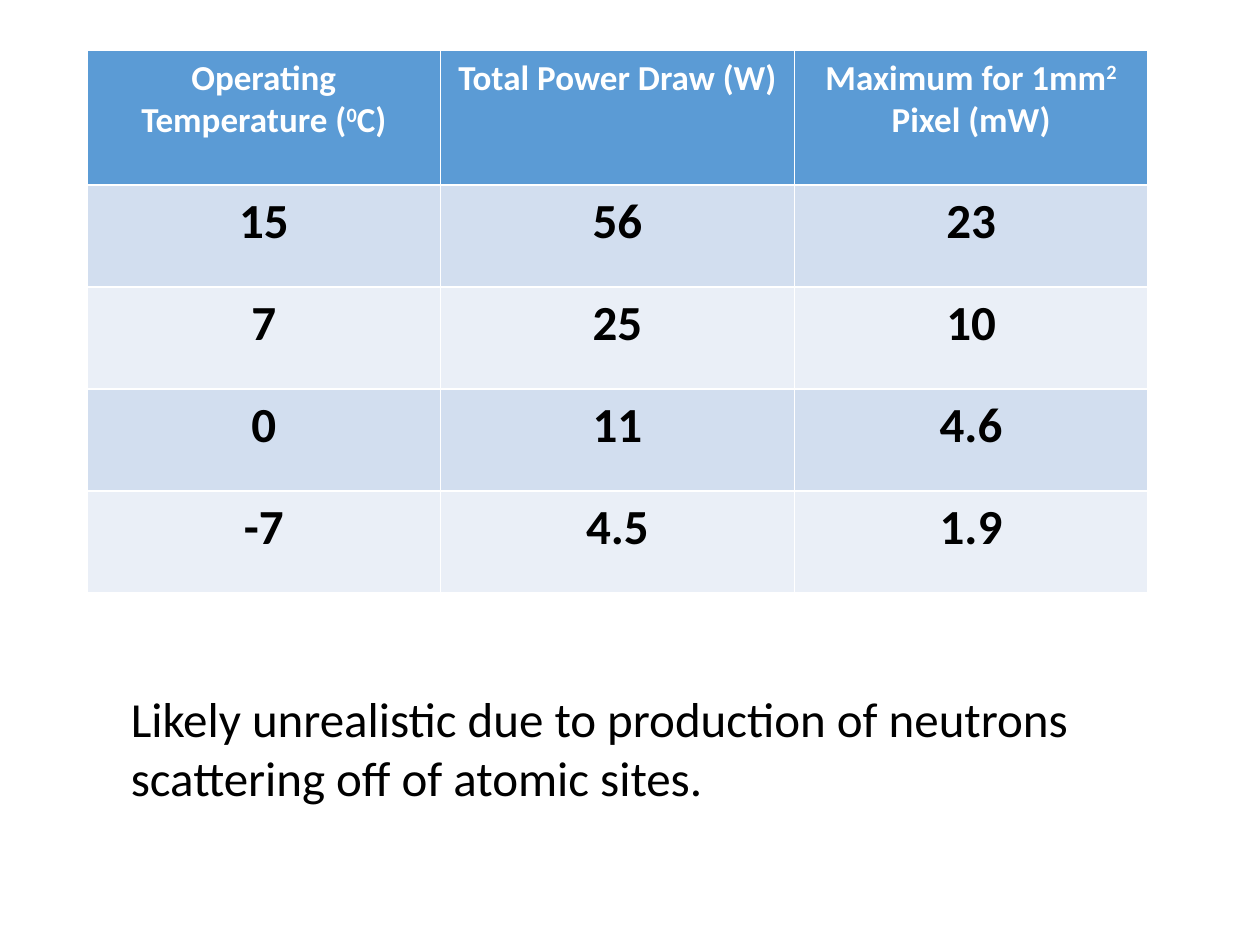
from dataclasses import dataclass

from pptx import Presentation
from pptx.dml.color import RGBColor
from pptx.enum.text import MSO_AUTO_SIZE, PP_ALIGN
from pptx.util import Pt


@dataclass(frozen=True)
class Theme:
    font: str = "Calibri"
    header_size: float = 20
    body_size: float = 28
    white: str = "FFFFFF"
    black: str = "000000"
    header_fill: str = "5B9BD5"
    band_fills: tuple = ("D2DEEF", "EAEFF7")


THEME = Theme()

# Each header is a list of (text, is_superscript) pieces
HEADERS = [
    [("Operating Temperature (", False), ("0", True), ("C)", False)],
    [("Total Power Draw (W)", False)],
    [("Maximum for 1mm", False), ("2", True), (" Pixel (mW)", False)],
]
POWER_ROWS = [
    ("15", "56", "23"),
    ("7", "25", "10"),
    ("0", "11", "4.6"),
    ("-7", "4.5", "1.9"),
]
NOTE = ("Likely unrealistic due to production of neutrons "
        "scattering off of atomic sites.")


def write_paragraph(p, pieces, size, color, bold=False):
    for text, is_superscript in pieces:
        r = p.add_run()
        r.text = text
        if is_superscript:
            r._r.get_or_add_rPr().set("baseline", "30000")
    p.font.name = THEME.font
    p.font.size = Pt(size)
    p.font.bold = bold
    p.font.color.rgb = RGBColor.from_string(color)


def fill_cell(cell, pieces, fill, size, color):
    cell.fill.solid()
    cell.fill.fore_color.rgb = RGBColor.from_string(fill)
    p = cell.text_frame.paragraphs[0]
    p.alignment = PP_ALIGN.CENTER
    write_paragraph(p, pieces, size, color, bold=True)


def add_power_table(s, left, top, col_width, header_height, row_height):
    rows, cols = len(POWER_ROWS) + 1, len(HEADERS)
    height = header_height + row_height * len(POWER_ROWS)
    # The default table style supplies the white rules between cells
    table = s.shapes.add_table(rows, cols, Pt(left), Pt(top),
                               Pt(col_width * cols), Pt(height)).table
    for col in table.columns:
        col.width = Pt(col_width)
    for i, row in enumerate(table.rows):
        row.height = Pt(row_height if i else header_height)

    # Header row
    for j, pieces in enumerate(HEADERS):
        fill_cell(table.cell(0, j), pieces, THEME.header_fill,
                  THEME.header_size, THEME.white)
    # Banded body rows
    for i, values in enumerate(POWER_ROWS):
        fill = THEME.band_fills[i % 2]
        for j, value in enumerate(values):
            fill_cell(table.cell(i + 1, j), [(value, False)], fill,
                      THEME.body_size, THEME.black)


def add_note(s, text, left, top, width, height):
    tf = s.shapes.add_textbox(Pt(left), Pt(top), Pt(width), Pt(height)).text_frame
    tf.word_wrap = True
    tf.auto_size = MSO_AUTO_SIZE.SHAPE_TO_FIT_TEXT
    write_paragraph(tf.paragraphs[0], [(text, False)],
                    THEME.body_size, THEME.black)


def main():
    prs = Presentation()
    prs.slide_width, prs.slide_height = Pt(720), Pt(540)
    s = prs.slides.add_slide(prs.slide_layouts[6])
    add_power_table(s, left=49.7, top=28.8, col_width=202.1,
                    header_height=77, row_height=58.3)
    add_note(s, NOTE, left=67.7, top=390.2, width=588.2, height=75)
    prs.save("out.pptx")


if __name__ == "__main__":
    main()
